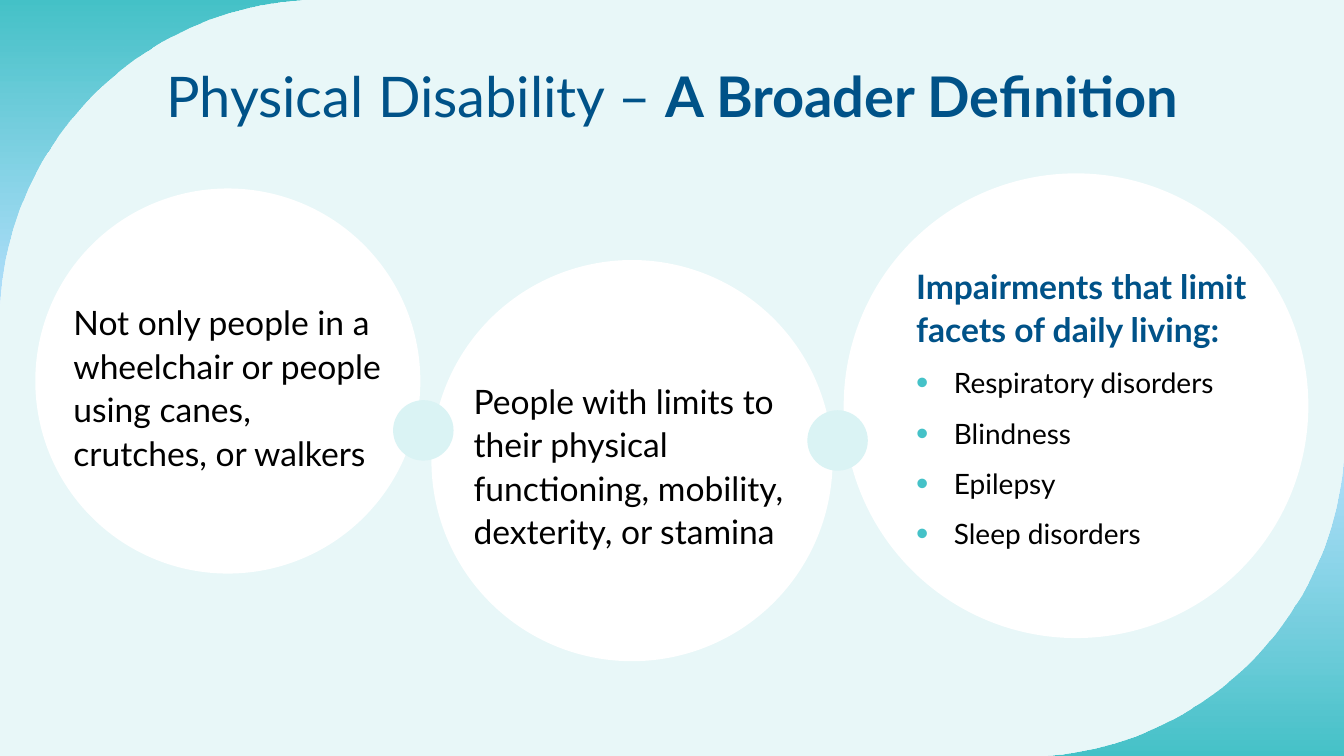
"""Build the slide on a broader definition of physical disability."""
from dataclasses import dataclass
from math import cos, pi, sin

from lxml import etree
from pptx import Presentation
from pptx.dml.color import RGBColor
from pptx.enum import shapes, text
from pptx.oxml import ns
from pptx.util import Pt

WIDTH, HEIGHT = 960, 540
CORNER = 230.4
CURVE_STEPS = 48
FONT = "Lato"
BACKGROUND = RGBColor(0xE8, 0xF7, 0xF8)
TEAL = RGBColor(0x45, 0xC2, 0xC8)
SKY = RGBColor(0xB3, 0xDF, 0xFF)
PALE = RGBColor(0xDA, 0xF3, 0xF4)
NAVY = RGBColor(0x00, 0x52, 0x88)
WHITE = RGBColor(0xFF, 0xFF, 0xFF)
BLACK = RGBColor(0x00, 0x00, 0x00)


@dataclass
class Circle:
    left: float
    top: float
    diameter: float
    color: RGBColor = WHITE


@dataclass
class Line:
    words: str
    size: float = 24
    color: RGBColor = BLACK
    bold: bool = False
    bullet: bool = False
    spacing: float = 1.08
    bold_ending: str = ""


@dataclass
class Block:
    left: float
    top: float
    width: float
    height: float
    lines: list[Line]
    alignment: text.PP_ALIGN = text.PP_ALIGN.LEFT


DISORDERS = ("Respiratory disorders", "Blindness", "Epilepsy", "Sleep disorders")
TITLE = Block(86.4, 33.84, 787.68, 61.92,
              [Line("Physical Disability – ", 40, NAVY, spacing=1.05,
                    bold_ending="A Broader Definition")],
              text.PP_ALIGN.CENTER)
TOPICS = [
    (Circle(25.2, 134.64, 275.04),
     Block(45.36, 195.84, 234.72, 145.44,
           [Line("Not only people in a wheelchair or people using canes, "
                 "crutches, or walkers")])),
    (Circle(308.16, 185.76, 286.56),
     Block(331.2, 243.36, 241.2, 154.08,
           [Line("People with limits to their physical functioning, mobility, "
                 "dexterity, or stamina")])),
    (Circle(602.64, 123.84, 331.92),
     Block(647.28, 161.28, 262.08, 235.44,
           [Line("Impairments that limit facets of daily living:",
                 color=NAVY, bold=True)]
           + [Line(name, 20, bullet=True) for name in DISORDERS])),
]
LINKS = [Circle(576.72, 293.04, 43.2, PALE), Circle(280.8, 285.84, 43.2, PALE)]


def add_corner(slide, left: float, top: float, rotation: float) -> None:
    """Draw the gradient area outside a quarter circle."""
    angles = [pi / 2 * step / CURVE_STEPS for step in range(CURVE_STEPS + 1)]
    curve = [(Pt(CORNER * (1 - sin(angle))), Pt(CORNER * (1 - cos(angle))))
             for angle in angles]
    builder = slide.shapes.build_freeform(0, 0)
    builder.add_line_segments(curve, close=True)
    shape = builder.convert_to_shape()
    shape.left, shape.top, shape.rotation = Pt(left), Pt(top), rotation
    shape.shadow.inherit = False
    shape.line.fill.background()
    shape.fill.gradient()
    shape.fill.gradient_angle = 270
    for stop, color, position in zip(shape.fill.gradient_stops, (TEAL, SKY), (0, 1)):
        stop.color.rgb = color
        stop.position = position
    last_color = list(shape._element.iter(ns.qn("a:srgbClr")))[-1]
    etree.SubElement(last_color, ns.qn("a:alpha"), val="90000")


def add_circle(slide, circle: Circle) -> None:
    """Draw a plain filled circle."""
    shape = slide.shapes.add_shape(
        shapes.MSO_SHAPE.OVAL, Pt(circle.left), Pt(circle.top),
        Pt(circle.diameter), Pt(circle.diameter))
    shape.shadow.inherit = False
    shape.fill.solid()
    shape.fill.fore_color.rgb = circle.color
    shape.line.fill.background()


def add_bullet(paragraph) -> None:
    """Give a paragraph a teal bullet and a hanging indent."""
    properties = paragraph._p.get_or_add_pPr()
    properties.set("marL", str(Pt(27)))
    properties.set("indent", str(Pt(-27)))
    color = etree.SubElement(properties, ns.qn("a:buClr"))
    etree.SubElement(color, ns.qn("a:srgbClr"), val=str(TEAL))
    etree.SubElement(properties, ns.qn("a:buSzPct"), val="125000")
    etree.SubElement(properties, ns.qn("a:buFont"), typeface="Arial")
    etree.SubElement(properties, ns.qn("a:buChar"), char="•")
    paragraph.space_before = Pt(10)


def add_block(slide, block: Block) -> None:
    """Write a bottom-anchored text block."""
    box = slide.shapes.add_textbox(
        Pt(block.left), Pt(block.top), Pt(block.width), Pt(block.height))
    frame = box.text_frame
    frame.word_wrap = True
    frame.vertical_anchor = text.MSO_ANCHOR.BOTTOM
    for index, line in enumerate(block.lines):
        paragraph = frame.add_paragraph() if index else frame.paragraphs[0]
        if line.bullet:
            add_bullet(paragraph)
        paragraph.alignment = block.alignment
        paragraph.line_spacing = line.spacing
        paragraph.font.name = FONT
        paragraph.font.size = Pt(line.size)
        paragraph.font.bold = line.bold
        paragraph.font.color.rgb = line.color
        paragraph.add_run().text = line.words
        if line.bold_ending:
            ending = paragraph.add_run()
            ending.text = line.bold_ending
            ending.font.bold = True


def main() -> None:
    """Assemble and save the presentation."""
    presentation = Presentation()
    presentation.slide_width, presentation.slide_height = Pt(WIDTH), Pt(HEIGHT)
    slide = presentation.slides.add_slide(presentation.slide_layouts[6])
    slide.background.fill.solid()
    slide.background.fill.fore_color.rgb = BACKGROUND
    add_block(slide, TITLE)
    add_corner(slide, 0, 0, 0)
    add_corner(slide, WIDTH - CORNER, HEIGHT - CORNER, 180)
    for circle, block in TOPICS:
        add_circle(slide, circle)
        add_block(slide, block)
    for link in LINKS:
        add_circle(slide, link)
    presentation.save("out.pptx")


if __name__ == "__main__":
    main()
